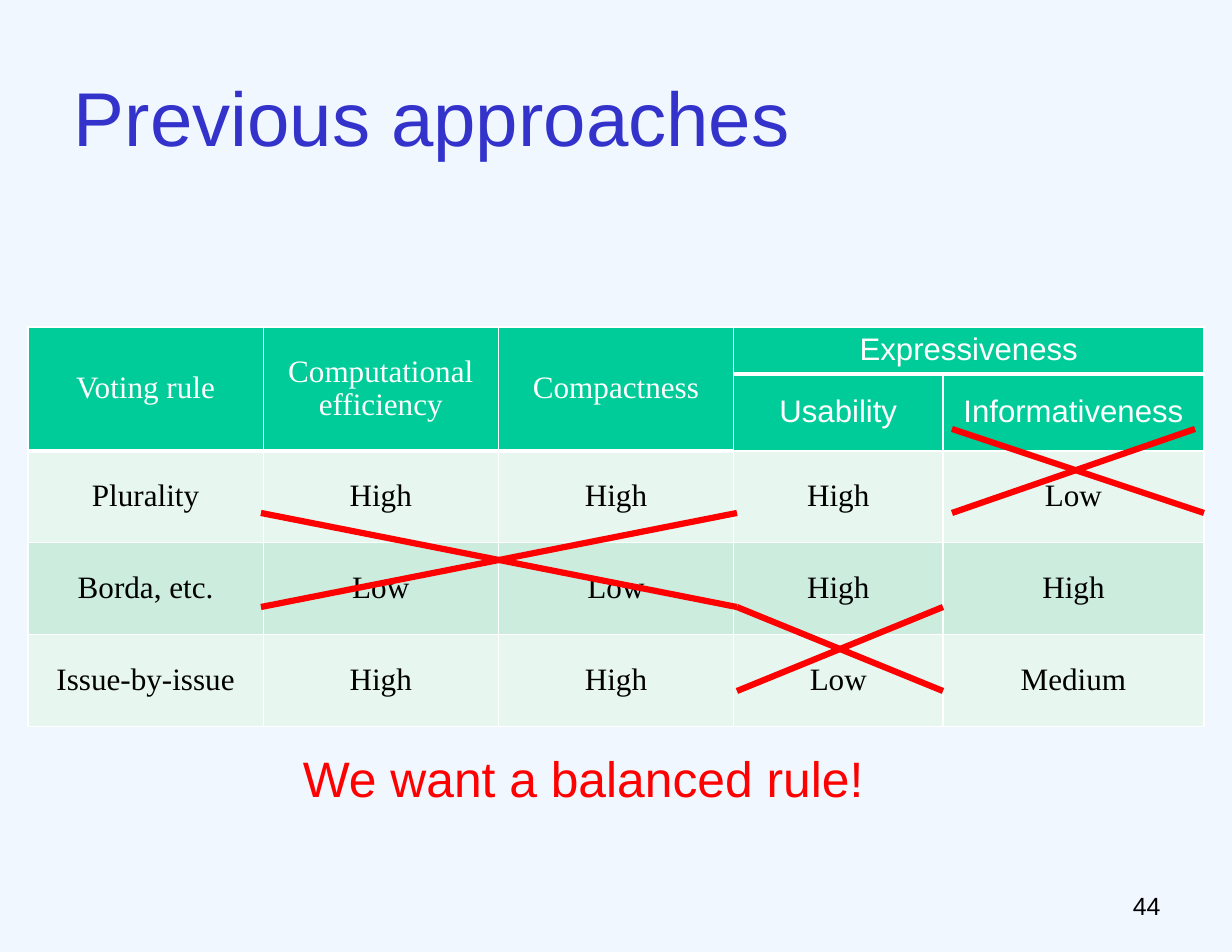
from lxml import etree
from pptx import Presentation
from pptx.dml.color import RGBColor
from pptx.enum.shapes import MSO_CONNECTOR
from pptx.enum.text import MSO_ANCHOR, MSO_AUTO_SIZE, PP_ALIGN
from pptx.oxml.ns import qn
from pptx.util import Inches, Pt

STRAIGHT = MSO_CONNECTOR.STRAIGHT
TOP, MIDDLE = MSO_ANCHOR.TOP, MSO_ANCHOR.MIDDLE
NO_FIT = MSO_AUTO_SIZE.NONE
LEFT, CENTER, RIGHT = PP_ALIGN.LEFT, PP_ALIGN.CENTER, PP_ALIGN.RIGHT

SANS, SERIF = "Arial", "Times New Roman"
COLORS = {
    "background": "F0F7FF", "title": "3333CC", "header": "00CC99",
    "light": "E7F6EF", "dark": "CCECDE", "white": "FFFFFF",
    "black": "000000", "red": "FF0000",
}

SLIDE_WIDTH, SLIDE_HEIGHT = 11, 8.5
COLUMNS = [2.1, 2.1, 2.1, 1.87, 2.33]
ROWS = [0.42, 0.42, 0.82, 0.82, 0.82]
HEADER_ROWS = 2
TABLE = [
    ["Voting rule", "Computational\nefficiency", "Compactness", "Expressiveness", ""],
    ["", "", "", "Usability", "Informativeness"],
    ["Plurality", "High", "High", "High", "Low"],
    ["Borda, etc.", "Low", "Low", "High", "High"],
    ["Issue-by-issue", "High", "High", "Low", "Medium"],
]

# Left, top, right, bottom, and the right end of the rising stroke
CROSSES = [
    (8.5, 3.83, 10.75, 4.58, 10.67),
    (2.33, 4.58, 6.58, 5.42, 6.58),
    (6.58, 5.42, 8.42, 6.17, 8.42),
]


def color(name):
    return RGBColor.from_string(COLORS[name])


def write(frame, text, size, font, color_name, align, spacing=1.0, before=0):
    for index, line in enumerate(text.split("\n")):
        paragraph = frame.paragraphs[0] if index == 0 else frame.add_paragraph()
        paragraph.alignment = align
        paragraph.line_spacing = spacing
        paragraph.space_before = Pt(before)
        run = paragraph.add_run()
        run.text = line
        run.font.size = Pt(size)
        run.font.name = font
        run.font.color.rgb = color(color_name)


def set_insets(frame, horizontal, vertical):
    frame.margin_left = frame.margin_right = Inches(horizontal)
    frame.margin_top = frame.margin_bottom = Inches(vertical)


def set_borders(cell, bottom_width):
    properties = cell._tc.get_or_add_tcPr()
    for side, width in (("L", 1), ("R", 1), ("T", 1), ("B", bottom_width)):
        line = etree.SubElement(properties, qn(f"a:ln{side}"), w=str(Pt(width)))
        fill = etree.SubElement(line, qn("a:solidFill"))
        etree.SubElement(fill, qn("a:srgbClr"), val=COLORS["white"])


def place_title(slide, left, top, width, height):
    title = slide.shapes.title
    title.left, title.top = Inches(left), Inches(top)
    title.width, title.height = Inches(width), Inches(height)
    frame = title.text_frame
    frame.auto_size = NO_FIT
    frame.word_wrap = True
    frame.vertical_anchor = MIDDLE
    set_insets(frame, 0.11, 0.06)
    write(frame, "Previous approaches", 49, SANS, "title", LEFT, before=20)


def place_text(slide, left, top, width, height, insets, **text):
    box = slide.shapes.add_textbox(Inches(left), Inches(top), Inches(width), Inches(height))
    frame = box.text_frame
    frame.word_wrap = True
    frame.vertical_anchor = TOP
    set_insets(frame, *insets)
    write(frame, **text)


def place_table(slide, left, top):
    frame = slide.shapes.add_table(
        len(ROWS), len(COLUMNS), Inches(left), Inches(top),
        Inches(sum(COLUMNS)), Inches(sum(ROWS)))
    table = frame.table
    table.first_row = table.horz_banding = False
    for column, width in zip(table.columns, COLUMNS):
        column.width = Inches(width)
    for row, height in zip(table.rows, ROWS):
        row.height = Inches(height)

    # Header: three tall cells and one wide cell
    for column in range(3):
        table.cell(0, column).merge(table.cell(1, column))
    table.cell(0, 3).merge(table.cell(0, 4))

    for row, values in enumerate(TABLE):
        is_header = row < HEADER_ROWS
        fill_name = "header" if is_header else ("light", "dark")[row % 2]
        for column, value in enumerate(values):
            cell = table.cell(row, column)
            thick = row == 0 or (row == 1 and cell.is_spanned)
            set_borders(cell, 3 if thick else 1)
            cell.fill.solid()
            cell.fill.fore_color.rgb = color(fill_name)
            cell.vertical_anchor = MIDDLE
            if value:
                font = SANS if is_header and column >= 3 else SERIF
                write(cell.text_frame, value, 20, font,
                      "white" if is_header else "black", CENTER, 0.95)


def place_cross(slide, left, top, right, bottom, rising_right):
    for start, end in (((rising_right, top), (left, bottom)), ((left, top), (right, bottom))):
        stroke = slide.shapes.add_connector(
            STRAIGHT, *(Inches(value) for value in (*start, *end)))
        stroke.line.color.rgb = color("red")
        stroke.line.width = Pt(4)
        etree.SubElement(stroke._element.spPr, qn("a:effectLst"))


def main():
    presentation = Presentation()
    presentation.slide_width = Inches(SLIDE_WIDTH)
    presentation.slide_height = Inches(SLIDE_HEIGHT)
    slide = presentation.slides.add_slide(presentation.slide_layouts[5])
    slide.background.fill.solid()
    slide.background.fill.fore_color.rgb = color("background")

    place_title(slide, 0.55, 0.34, 9.88, 1.4)
    place_table(slide, 0.25, 2.92)

    # Page number
    place_text(slide, 7.92, 7.89, 2.55, 0.58, (0.11, 0.06), text="44", size=16,
               font=SANS, color_name="black", align=RIGHT, before=4)

    # Crosses over the weak points of each rule
    for cross in CROSSES:
        place_cross(slide, *cross)

    # Conclusion
    place_text(slide, 0.5, 6.67, 9.42, 0.74, (0.1, 0.05), text="We want a balanced rule!",
               size=32, font=SANS, color_name="red", align=CENTER, spacing=0.95, before=11)

    presentation.save("out.pptx")


if __name__ == "__main__":
    main()
